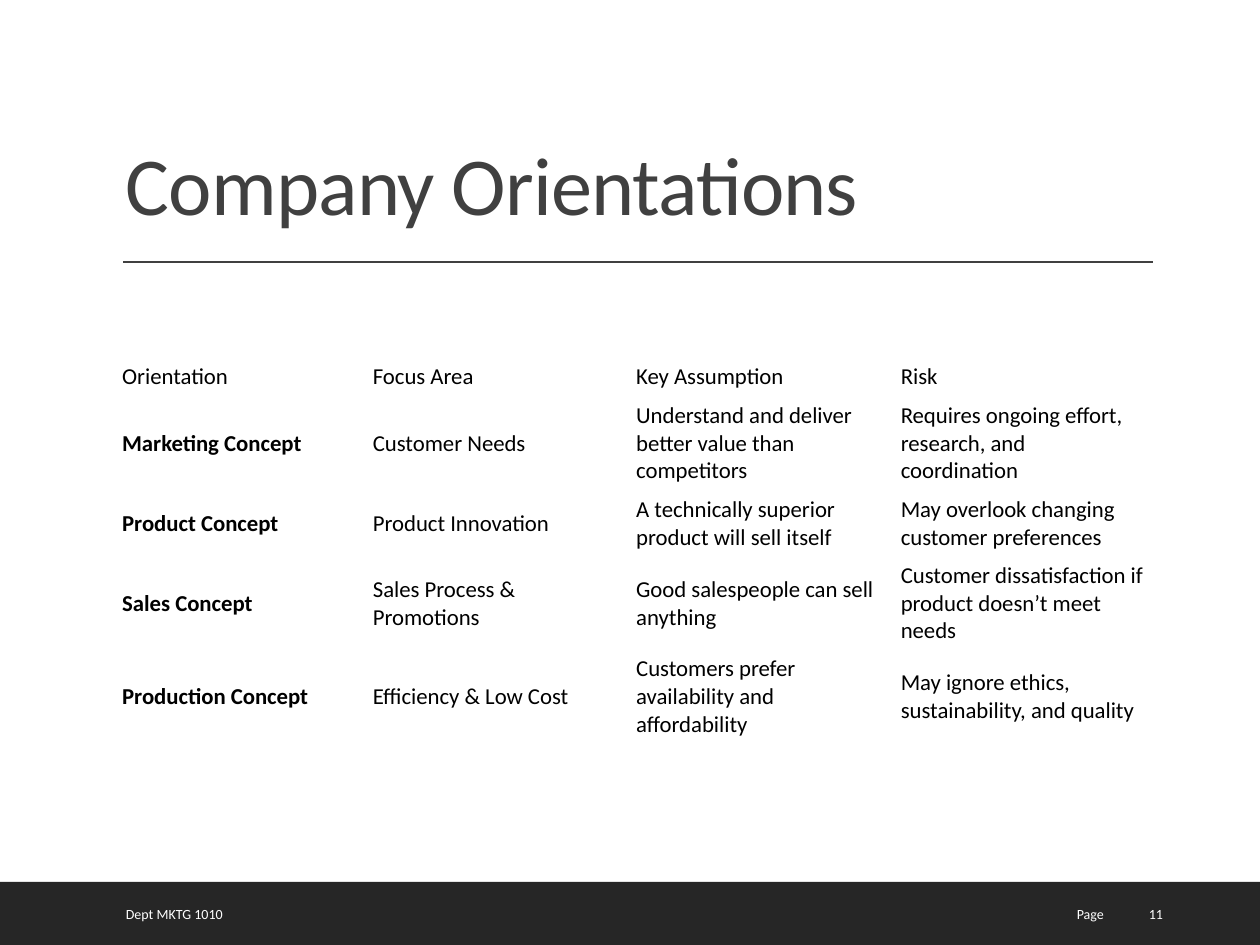
import pptx
import pptx.util
import pptx.dml.color
import pptx.enum.shapes
import pptx.enum.text
import pptx.oxml

COLORS = {"paper": "FFFFFF", "heading": "404040", "footer": "262626", "body": "000000"}
ANCHOR = pptx.enum.text.MSO_ANCHOR
ALIGN = pptx.enum.text.PP_ALIGN
GRID_COLUMNS, GRID_ROWS = 100, 75

TITLE = {"size": 47, "color": "heading", "spacing": -50}
FOOTER = {"size": 8, "color": "paper"}
CELL = {"size": 13, "color": "body"}

HEADERS = ["Orientation", "Focus Area", "Key Assumption", "Risk"]
CONCEPTS = [
    ["Marketing Concept", "Customer Needs",
     "Understand and deliver better value than competitors",
     "Requires ongoing effort, research, and coordination"],
    ["Product Concept", "Product Innovation",
     "A technically superior product will sell itself",
     "May overlook changing customer preferences"],
    ["Sales Concept", "Sales Process & Promotions",
     "Good salespeople can sell anything",
     "Customer dissatisfaction if product doesn’t meet needs"],
    ["Production Concept", "Efficiency & Low Cost",
     "Customers prefer availability and affordability",
     "May ignore ethics, sustainability, and quality"],
]


def set_attributes(target, values):
    for name, value in values.items():
        setattr(target, name, value)


class SlideBuilder:
    """Holds the style and the current slide; places parts on a 100 by 75 grid."""

    font = "Calibri"

    def __init__(self, presentation):
        self.slide = presentation.slides.add_slide(presentation.slide_layouts[6])
        self.column = presentation.slide_width / GRID_COLUMNS
        self.row = presentation.slide_height / GRID_ROWS

    def across(self, columns):
        return int(columns * self.column)

    def down(self, rows):
        return int(rows * self.row)

    def box(self, left, top, width, height):
        return self.across(left), self.down(top), self.across(width), self.down(height)

    def color(self, name):
        return pptx.dml.color.RGBColor.from_string(COLORS[name])

    def fill(self, target, name):
        target.fill.solid()
        target.fill.fore_color.rgb = self.color(name)

    def add_text(self, frame, text, style, bold=False, **paragraph_format):
        paragraph = frame.paragraphs[0]
        set_attributes(paragraph, paragraph_format)
        run = paragraph.add_run()
        run.text = text
        set_attributes(run.font, {"name": self.font, "bold": bold,
                                  "size": pptx.util.Pt(style["size"])})
        run.font.color.rgb = self.color(style["color"])
        if "spacing" in style:
            run.font._element.set("spc", str(style["spacing"]))

    def rectangle(self, place, color):
        kind = pptx.enum.shapes.MSO_SHAPE.RECTANGLE
        shape = self.slide.shapes.add_shape(kind, *self.box(*place))
        shape.shadow.inherit = False
        self.fill(shape, color)
        shape.line.fill.background()

    def text(self, place, text, style, anchor=ANCHOR.MIDDLE, **paragraph_format):
        frame = self.slide.shapes.add_textbox(*self.box(*place)).text_frame
        set_attributes(frame, {"word_wrap": True, "vertical_anchor": anchor})
        self.add_text(frame, text, style, **paragraph_format)

    def rule(self, left, right, top, color):
        line = self.slide.shapes.add_connector(
            pptx.enum.shapes.MSO_CONNECTOR.STRAIGHT,
            self.across(left), self.down(top), self.across(right), self.down(top))
        line.line.color.rgb = self.color(color)
        line.line.width = pptx.util.Pt(1)
        line._element.spPr.append(pptx.oxml.parse_xml(
            '<a:effectLst xmlns:a="http://schemas.openxmlformats.org/drawingml/2006/main"/>'))

    def table(self, left, top, widths, heights, rows):
        place = self.box(left, top, sum(widths), sum(heights))
        table = self.slide.shapes.add_table(len(rows), len(widths), *place).table
        set_attributes(table, {"first_row": False, "horz_banding": False})
        for column, width in zip(table.columns, widths):
            column.width = self.across(width)
        side, edge = self.across(0.7), self.down(0.4)
        cell_format = {"vertical_anchor": ANCHOR.MIDDLE, "margin_left": side,
                       "margin_right": side, "margin_top": edge, "margin_bottom": edge}
        for row_index, (height, texts) in enumerate(zip(heights, rows)):
            table.rows[row_index].height = self.down(height)
            for column_index, text in enumerate(texts):
                cell = table.cell(row_index, column_index)
                set_attributes(cell, cell_format)
                self.fill(cell, "paper")
                is_concept_name = row_index > 0 and column_index == 0
                self.add_text(cell.text_frame, text, CELL, bold=is_concept_name)


def main():
    presentation = pptx.Presentation()
    set_attributes(presentation, {"slide_width": pptx.util.Inches(10),
                                  "slide_height": pptx.util.Inches(7.5)})
    builder = SlideBuilder(presentation)

    # Background and title
    builder.rectangle((0, 0, GRID_COLUMNS, GRID_ROWS), "paper")
    builder.text((9, 3.1, 82.5, 15.9), "Company Orientations", TITLE,
                 anchor=ANCHOR.BOTTOM, line_spacing=0.9)
    builder.rule(9.8, 91.5, 20.8, "heading")

    # Footer band
    builder.rectangle((0, 70, GRID_COLUMNS, 5), "footer")
    for left, width, text, alignment in [
        (9, 55.9, "Dept MKTG 1010", ALIGN.LEFT),
        (67.4, 21.2, "Page", ALIGN.RIGHT),
        (90.2, 6.4, "11", ALIGN.LEFT),
    ]:
        builder.text((left, 70.5, width, 4), text, FOOTER,
                     alignment=alignment, space_after=pptx.util.Pt(6))

    # Comparison of orientations
    builder.table(9, 28.3, [19.9, 20.9, 21, 20.7], [3.2, 7.4, 5.3, 7.4, 7.4],
                  [HEADERS] + CONCEPTS)

    presentation.save("out.pptx")


if __name__ == "__main__":
    main()
